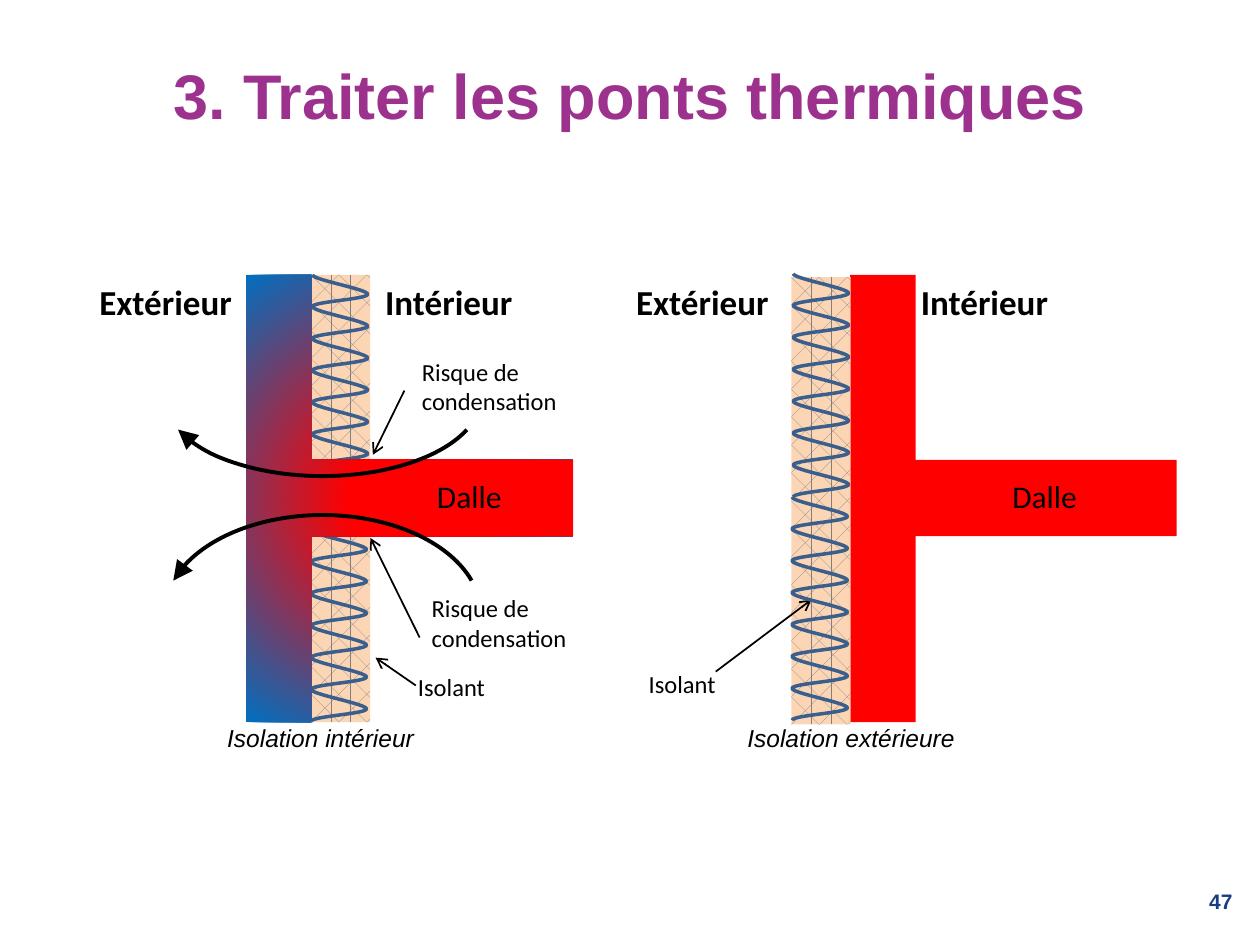
from dataclasses import dataclass

from lxml.etree import Element, SubElement
from pptx import Presentation
from pptx.dml.color import RGBColor
from pptx.enum.dml import MSO_PATTERN
from pptx.enum.shapes import MSO_CONNECTOR, MSO_SHAPE as Shape
from pptx.enum.text import MSO_ANCHOR as Anchor, MSO_AUTO_SIZE as AutoSize, PP_ALIGN as Align
from pptx.oxml import parse_xml
from pptx.oxml.ns import nsdecls, qn
from pptx.util import Pt


@dataclass(frozen=True)
class Theme:
    heading: str = "Arial"
    body: str = "Calibri"
    purple: str = "9D328E"
    navy: str = "183C85"
    black: str = "000000"
    hot: str = "FF0000"
    cold: str = "0070C0"
    coil: str = "3A5F8C"
    insulation: str = "FCD5B5"
    hatch: str = "808080"
    title_size: int = 36
    place_size: int = 20
    slab_size: int = 18
    note_size: int = 14
    number_size: int = 12


THEME = Theme()


def color(value):
    return RGBColor.from_string(value)


def write_text(frame, text, *, size, font=THEME.body, ink=THEME.black, bold=False,
               italic=False, align=Align.LEFT, anchor=Anchor.TOP):
    frame.word_wrap = True
    frame.vertical_anchor = anchor
    paragraph = frame.paragraphs[0]
    paragraph.alignment = align
    run = paragraph.add_run()
    run.text = text
    run.font.name = font
    run.font.size = Pt(size)
    run.font.bold = bold
    run.font.italic = italic
    run.font.color.rgb = color(ink)


class SlideBuilder:
    def __init__(self, slide, theme):
        self.slide = slide
        self.shapes = slide.shapes
        self.theme = theme

    def title(self, text, left, top, width, height):
        shape = self.shapes.title
        shape.left, shape.top, shape.width, shape.height = map(Pt, (left, top, width, height))
        write_text(shape.text_frame, text, size=self.theme.title_size, font=self.theme.heading,
                   ink=self.theme.purple, bold=True, align=Align.CENTER, anchor=Anchor.MIDDLE)

    def text(self, text, left, top, width, height, grow=True, **style):
        box = self.shapes.add_textbox(Pt(left), Pt(top), Pt(width), Pt(height))
        write_text(box.text_frame, text, **style)
        box.text_frame.auto_size = AutoSize.SHAPE_TO_FIT_TEXT if grow else AutoSize.NONE

    def shape(self, kind, left, top, width, height):
        shape = self.shapes.add_shape(kind, Pt(left), Pt(top), Pt(width), Pt(height))
        shape.shadow.inherit = False
        return shape

    def slab(self, left, top, width, height):
        shape = self.shape(Shape.RECTANGLE, left, top, width, height)
        shape.fill.solid()
        shape.fill.fore_color.rgb = color(self.theme.hot)
        shape.line.fill.background()

    def insulation(self, left, top, width, height):
        shape = self.shape(Shape.RECTANGLE, left, top, width, height)
        shape.fill.patterned()
        shape.fill.pattern = MSO_PATTERN.DIVOT
        shape.fill.fore_color.rgb = color(self.theme.hatch)
        shape.fill.back_color.rgb = color(self.theme.insulation)
        shape.line.fill.background()

    def outline(self, points, close):
        (left, top), *others = [(Pt(x), Pt(y)) for x, y in points]
        builder = self.shapes.build_freeform(left, top)
        builder.add_line_segments(others, close=close)
        shape = builder.convert_to_shape()
        shape.shadow.inherit = False
        return shape

    def wall(self, left, top, gradient=False):
        """Wall with its floor slab, as one T-shaped outline."""
        thick, reach, slab_top, slab_bottom, bottom = 37.4, 186.5, 105.8, 149.4, 255.6
        corners = [(0, 0), (thick, 0), (thick, slab_top), (reach, slab_top),
                   (reach, slab_bottom), (thick, slab_bottom), (thick, bottom), (0, bottom)]
        shape = self.outline([(left + x, top + y) for x, y in corners], close=True)
        shape.line.fill.background()
        shape.fill.solid()
        shape.fill.fore_color.rgb = color(self.theme.hot)
        if gradient:
            properties = shape._element.spPr
            properties.replace(properties.find(qn("a:solidFill")), parse_xml(
                f'<a:gradFill {nsdecls("a")} rotWithShape="1"><a:gsLst>'
                f'<a:gs pos="22000"><a:srgbClr val="{self.theme.hot}"/></a:gs>'
                f'<a:gs pos="100000"><a:srgbClr val="{self.theme.cold}"/></a:gs></a:gsLst>'
                '<a:path path="circle"><a:fillToRect l="50000" t="50000" r="50000" b="50000"/>'
                '</a:path></a:gradFill>'))

    def bend(self, shape, handle):
        """Turn straight segments into curves that start and end lengthwise."""
        points = list(shape._element.iter(qn("a:pt")))
        for start, end in zip(points, points[1:]):
            segment = end.getparent()
            segment.tag = qn("a:cubicBezTo")
            for position, (anchor, shift) in enumerate(((start, handle), (end, -handle))):
                control = Element(qn("a:pt"), x=str(int(anchor.get("x")) + shift),
                                  y=anchor.get("y"))
                segment.insert(position, control)

    def spring(self, left, top, length=127.6, depth=31.6, coils=7, handle=2.9):
        """Coil drawn lengthwise, then turned upright."""
        pitch, out = length / coils, 0.61
        points = [(left, top + depth)]
        for coil in range(coils):
            points += [(left + pitch * (coil + out), top),
                       (left + pitch * (coil + 1), top + depth)]
        shape = self.outline(points, close=False)
        self.bend(shape, Pt(handle))
        shape.rotation = 90
        shape.fill.background()
        shape.line.color.rgb = color(self.theme.coil)
        shape.line.width = Pt(2)
        return shape

    def spring_pair(self, left, top):
        """Two springs, one under the other."""
        pair = [self.spring(left, top + 127.6), self.spring(left + 0.7, top)]
        self.shapes.add_group_shape(pair)

    def stroke(self, shape, width, end, **head):
        shape.line.color.rgb = color(self.theme.black)
        shape.line.width = Pt(width)
        SubElement(shape._element.spPr.get_or_add_ln(), qn(f"a:{end}"), **head)

    def heat_arc(self, left, top, width, height, flip=False):
        shape = self.shape(Shape.ARC, left, top, width, height)
        shape.adjustments[0], shape.adjustments[1] = 115.69, 208.28
        shape.fill.background()
        self.stroke(shape, 2.25, "headEnd", type="triangle", w="lg", len="lg")
        if flip:
            shape._element.spPr.xfrm.set("flipV", "1")

    def arrow(self, start, end):
        connector = self.shapes.add_connector(MSO_CONNECTOR.STRAIGHT, *map(Pt, start + end))
        self.stroke(connector, 1, "tailEnd", type="arrow")
        SubElement(connector._element.spPr, qn("a:effectLst"))


def main():
    presentation = Presentation()
    presentation.slide_width, presentation.slide_height = Pt(720), Pt(540)
    slide = presentation.slides.add_slide(presentation.slide_layouts[5])
    builder = SlideBuilder(slide, THEME)
    place = dict(size=THEME.place_size, bold=True)
    note = dict(size=THEME.note_size)
    caption = dict(size=THEME.note_size, font=THEME.heading, italic=True, align=Align.CENTER)

    # Walls and insulation: outside on the right, inside on the left
    builder.wall(485.8, 157)
    builder.insulation(177.8, 157, 33.8, 255.6)
    builder.spring_pair(129.8, 205)
    builder.wall(140.6, 157, gradient=True)

    # Title and slide number
    builder.title("3. Traiter les ponts thermiques", 36, 9, 648, 90)
    builder.text("47", 543.6, 500.4, 167.8, 28.8, grow=False, size=THEME.number_size,
                 font=THEME.heading, ink=THEME.navy, bold=True, align=Align.RIGHT,
                 anchor=Anchor.MIDDLE)

    # Warm slab and the heat flow around it
    builder.slab(236.9, 262.8, 90.7, 43.6)
    builder.heat_arc(93.6, 181.4, 181.4, 90.7, flip=True)
    builder.heat_arc(93.6, 294.3, 181.4, 113.8)
    builder.insulation(452.3, 158.4, 33.8, 255.6)

    # Place names, slab names and captions
    for outside, inside, slab, slab_width, below, words in (
            (49.7, 213, 242.6, 58.3, 115.2, "Isolation intérieur"),
            (356.4, 519.1, 571.4, 83.5, 418.3, "Isolation extérieure")):
        builder.text("Extérieur", outside, 156.6, 90.7, 31.5, **place)
        builder.text("Intérieur", inside, 156.6, 92.2, 31.5, **place)
        builder.text("Dalle", slab, 269.3, slab_width, 28.8, size=THEME.slab_size)
        builder.text(words, below, 409.7, 136.1, 24.5, **caption)

    # Notes with their arrows
    for words, left, top, width, height, start, end in (
            ("Isolant", 231.8, 380.6, 83.5, 24.5, (237.6, 391.7), (214.6, 375.8)),
            ("Isolant", 363.6, 378.7, 83.5, 24.5, (409, 383.8), (463.7, 342.7)),
            ("Risque de condensation", 234, 200.2, 125.3, 41, (231.1, 223.2), (213.1, 259.9)),
            ("Risque de condensation", 239.6, 335.5, 125.3, 41, (239.8, 364.3), (211.7, 307.4))):
        builder.text(words, left, top, width, height, **note)
        builder.arrow(start, end)

    builder.spring_pair(404.6, 204.4)
    presentation.save("out.pptx")


if __name__ == "__main__":
    main()
